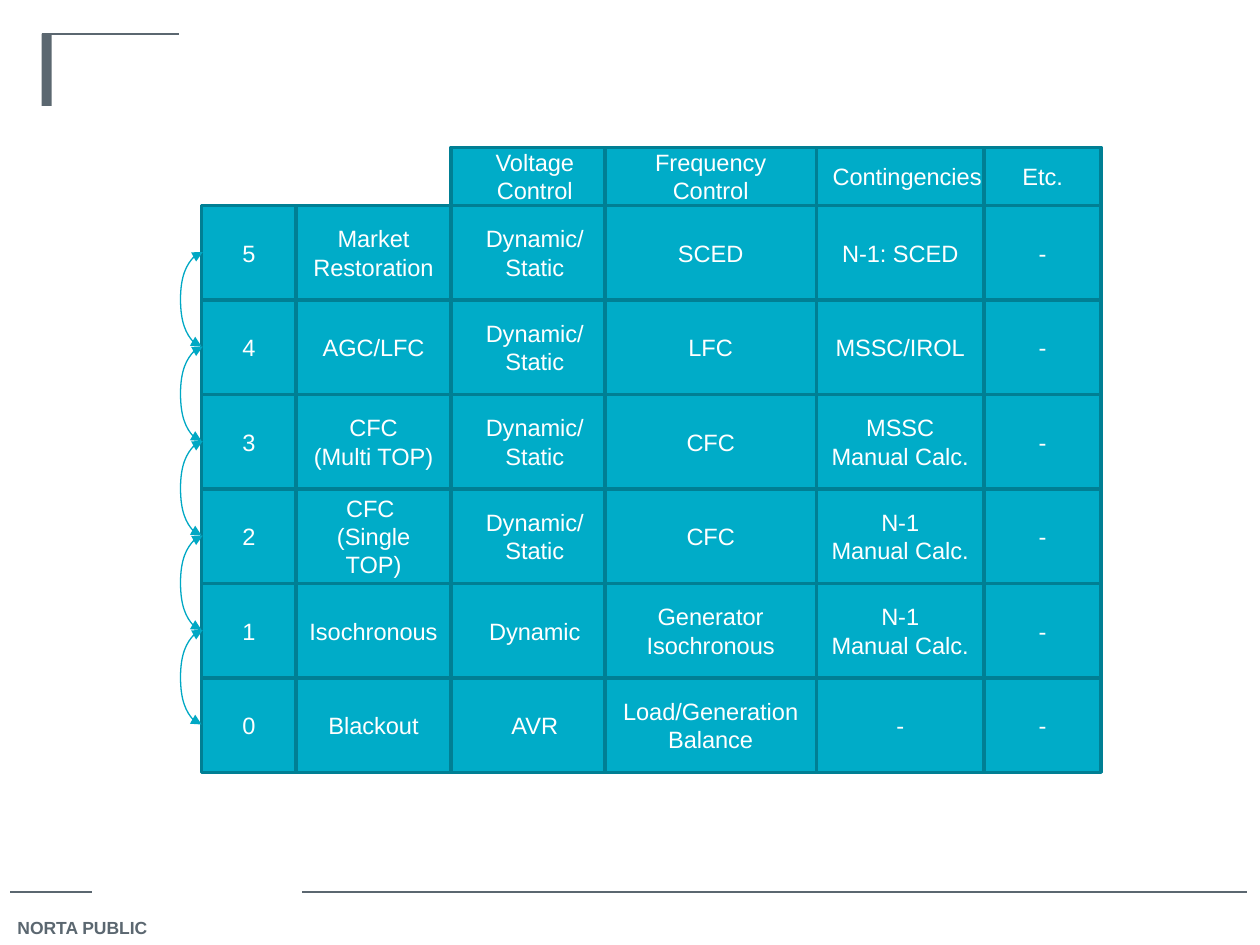
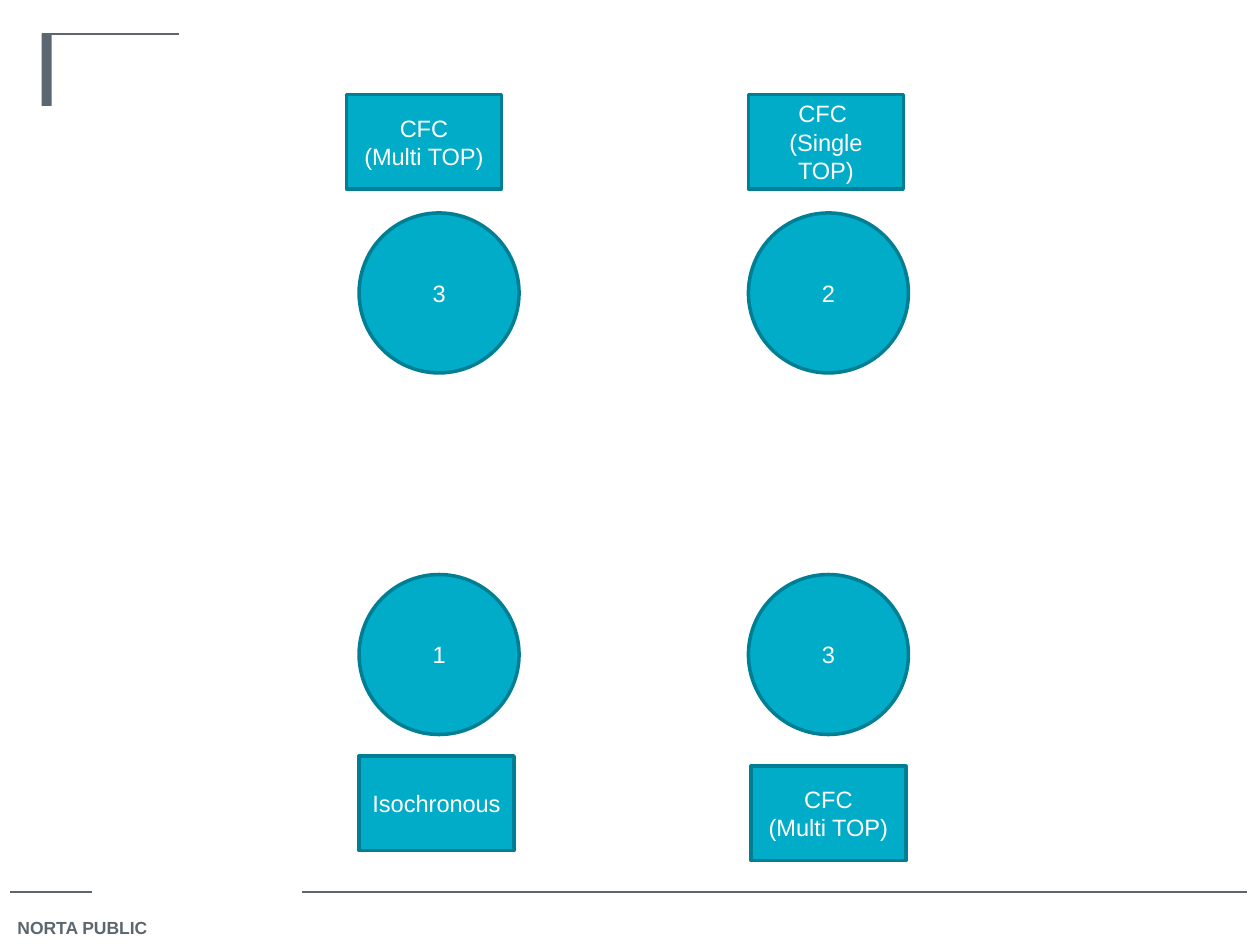
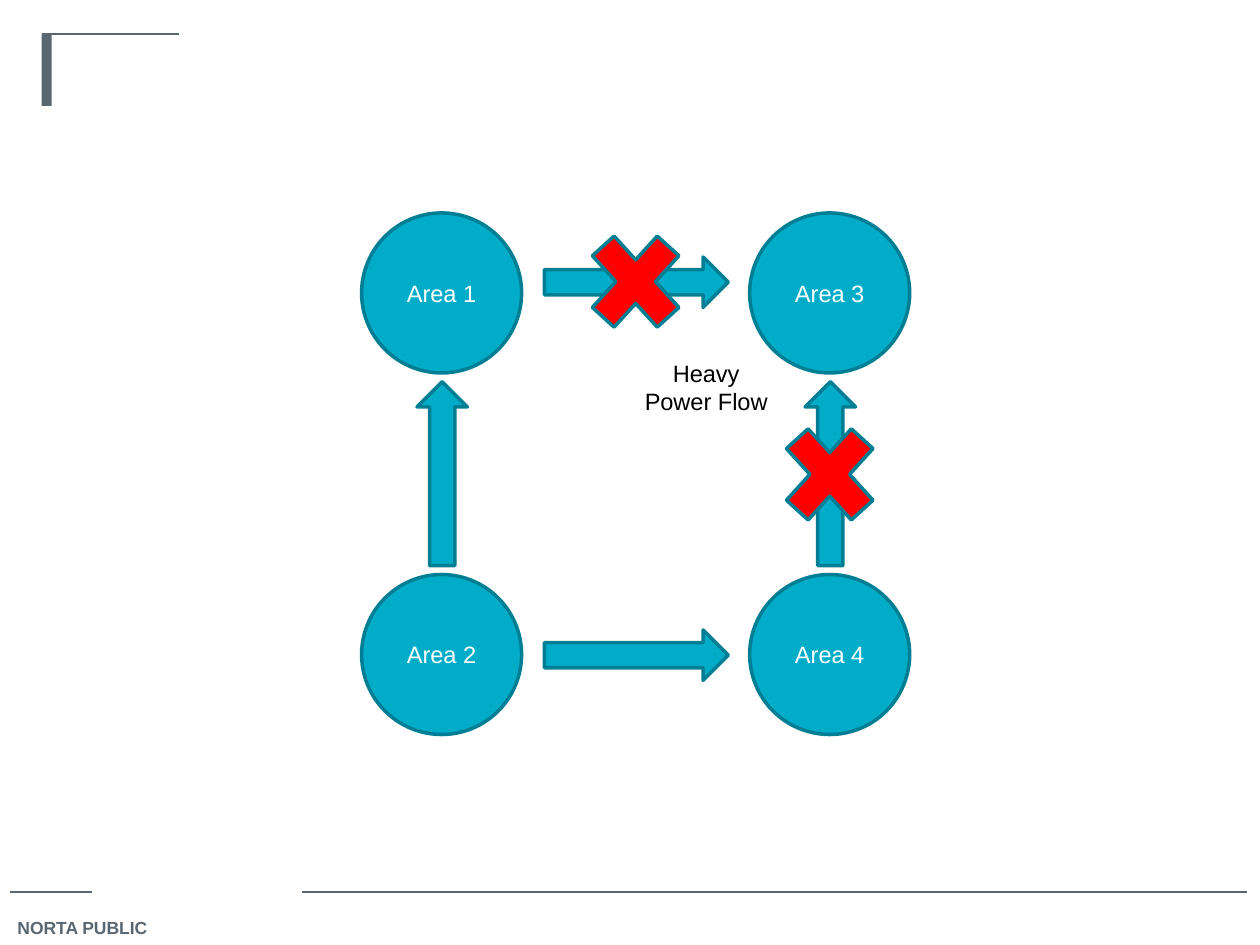
from lxml import etree
from pptx import Presentation
from pptx import util as u
from pptx.dml import color
from pptx.enum import shapes, text
from pptx.oxml import ns

TEAL, DARK_TEAL, ARROW_TEAL = "00ACC8", "007F94", "00A8C4"
GRAY, RED, WHITE, BLACK = "5B6770", "FF0000", "FFFFFF", "000000"
FONT = "Arial"
BODY_SIZE = 13.5
SHAPE = shapes.MSO_SHAPE
CONNECTOR = shapes.MSO_CONNECTOR

CELL = 0.75
NAME_WIDTH = 1.23
GRID_TOP = 1.63
HEADER_HEIGHT = 0.46
CIRCLE = 1.27
CIRCLE_TOPS = (1.69, 4.56)
ARROW_SIZE = (0.4, 1.46)
CROSS_SIZE = (0.99, 1.09)

MULTI_TOP = "CFC\n(Multi TOP)"
SINGLE_TOP = "CFC \n(Single TOP)"
DYNAMIC_STATIC = "Dynamic/\nStatic"
N1_MANUAL = "N-1\nManual Calc."

STATE_COLUMNS = [
    (1.6, CELL, None, ["5", "4", "3", "2", "1", "0"]),
    (2.35, NAME_WIDTH, None,
     ["Market Restoration", "AGC/LFC", MULTI_TOP, SINGLE_TOP, "Isochronous", "Blackout"]),
    (3.58, 1.33, "Voltage Control", [DYNAMIC_STATIC] * 4 + ["Dynamic", "AVR"]),
    (4.8, 1.68, "Frequency Control",
     ["SCED", "LFC", "CFC", "CFC", "Generator\nIsochronous", "Load/Generation\nBalance"]),
    (6.48, 1.33, "Contingencies",
     ["N-1: SCED", "MSSC/IROL", "MSSC\nManual Calc.", N1_MANUAL, N1_MANUAL, "-"]),
    (7.81, 0.93, "Etc.", ["-"] * 6),
]
HEADER_WIDTHS = {"Contingencies": 1.44}


def rgb(hex_code):
    return color.RGBColor.from_string(hex_code)


def write_text(frame, content, size, hex_code, bold=False, align=text.PP_ALIGN.CENTER):
    frame.text = content
    for paragraph in frame.paragraphs:
        paragraph.alignment = align
        paragraph.font.name = FONT
        paragraph.font.size = u.Pt(size)
        paragraph.font.bold = bold
        paragraph.font.color.rgb = rgb(hex_code)


def add_block(slide, kind, left, top, width, height, content="", fill=TEAL,
              outline=DARK_TEAL, rotation=0):
    shape = slide.shapes.add_shape(kind, *map(u.Inches, (left, top, width, height)))
    shape.shadow.inherit = False
    shape.rotation = rotation
    shape.fill.solid()
    shape.fill.fore_color.rgb = rgb(fill)
    if outline:
        shape.line.color.rgb = rgb(outline)
        shape.line.width = u.Pt(2)
    else:
        shape.line.fill.background()
    if content:
        shape.text_frame.vertical_anchor = text.MSO_ANCHOR.MIDDLE
        write_text(shape.text_frame, content, BODY_SIZE, WHITE)
    return shape


def add_line(slide, start, end, hex_code=GRAY, kind=CONNECTOR.STRAIGHT):
    connector = slide.shapes.add_connector(kind, *map(u.Inches, (*start, *end)))
    connector.line.color.rgb = rgb(hex_code)
    connector.line.width = u.Pt(0.75)
    etree.SubElement(connector._element.spPr, ns.qn("a:effectLst"))
    return connector


def add_transition(slide, top):
    connector = add_line(slide, (1.61, top), (1.6, top + CELL), ARROW_TEAL, CONNECTOR.CURVE)
    line = connector.line._get_or_add_ln()
    for end in ("a:headEnd", "a:tailEnd"):
        etree.SubElement(line, ns.qn(end), type="triangle")
    guides = connector._element.spPr.find(ns.qn("a:prstGeom")).get_or_add_avLst()
    etree.SubElement(guides, ns.qn("a:gd"), name="adj1", fmla="val 1800000")


def add_label(slide, left, top, width, height, content, size, hex_code, wrap, **style):
    box = slide.shapes.add_textbox(*map(u.Inches, (left, top, width, height)))
    box.text_frame.word_wrap = wrap
    box.text_frame.auto_size = text.MSO_AUTO_SIZE.SHAPE_TO_FIT_TEXT
    write_text(box.text_frame, content, size, hex_code, **style)


def add_framed_slide(presentation):
    slide = presentation.slides.add_slide(presentation.slide_layouts[6])
    add_line(slide, (0.08, 7.08), (0.73, 7.08))
    add_line(slide, (2.4, 7.08), (9.9, 7.08))
    add_label(slide, 0.04, 7.23, 1.25, 0.27, "NORTA PUBLIC", 10, GRAY, False,
              bold=True, align=text.PP_ALIGN.LEFT)
    add_block(slide, SHAPE.RECTANGLE, 0.33, 0.27, 0.08, 0.57, fill=GRAY, outline=None)
    add_line(slide, (0.33, 0.27), (1.42, 0.27))
    return slide


def add_circles(slide, lefts, rows):
    for top, labels in zip(CIRCLE_TOPS, rows):
        for left, label in zip(lefts, labels):
            add_block(slide, SHAPE.OVAL, left, top, CIRCLE, CIRCLE, label)


def build_state_grid(presentation):
    slide = add_framed_slide(presentation)
    for left, width, header, cells in STATE_COLUMNS:
        if header:
            add_block(slide, SHAPE.RECTANGLE, left, GRID_TOP - HEADER_HEIGHT,
                      HEADER_WIDTHS.get(header, width), HEADER_HEIGHT, header)
        for row, content in enumerate(cells):
            add_block(slide, SHAPE.RECTANGLE, left, GRID_TOP + row * CELL, width, CELL, content)
    for step in range(5):
        add_transition(slide, 2 + step * CELL)


def build_area_states(presentation):
    slide = add_framed_slide(presentation)
    add_circles(slide, (2.85, 5.94), ("32", "13"))
    for left, top, name in [(2.85, 6, "Isochronous"), (5.94, 0.75, SINGLE_TOP),
                            (2.75, 0.75, MULTI_TOP), (5.96, 6.08, MULTI_TOP)]:
        add_block(slide, SHAPE.RECTANGLE, left, top, NAME_WIDTH, CELL, name)


def build_power_flow(presentation):
    slide = add_framed_slide(presentation)
    add_circles(slide, (2.87, 5.95), (("Area 1", "Area 3"), ("Area 2", "Area 4")))
    for left, top, rotation in [(3.31, 3.03, 0), (6.39, 3.03, 0),
                                (4.85, 1.51, 90), (4.85, 4.47, 90)]:
        add_block(slide, SHAPE.UP_ARROW, left, top, *ARROW_SIZE, rotation=rotation)
    for left, top in [(4.55, 1.69), (6.09, 3.22)]:
        add_block(slide, SHAPE.MATH_MULTIPLY, left, top, *CROSS_SIZE, fill=RED)
    add_label(slide, 4.97, 2.8, 1.27, 0.56, "Heavy Power Flow", BODY_SIZE, BLACK, True)


def main():
    presentation = Presentation()
    presentation.slide_width = u.Inches(10)
    presentation.slide_height = u.Inches(7.5)
    build_state_grid(presentation)
    build_area_states(presentation)
    build_power_flow(presentation)
    presentation.save("out.pptx")


if __name__ == "__main__":
    main()
